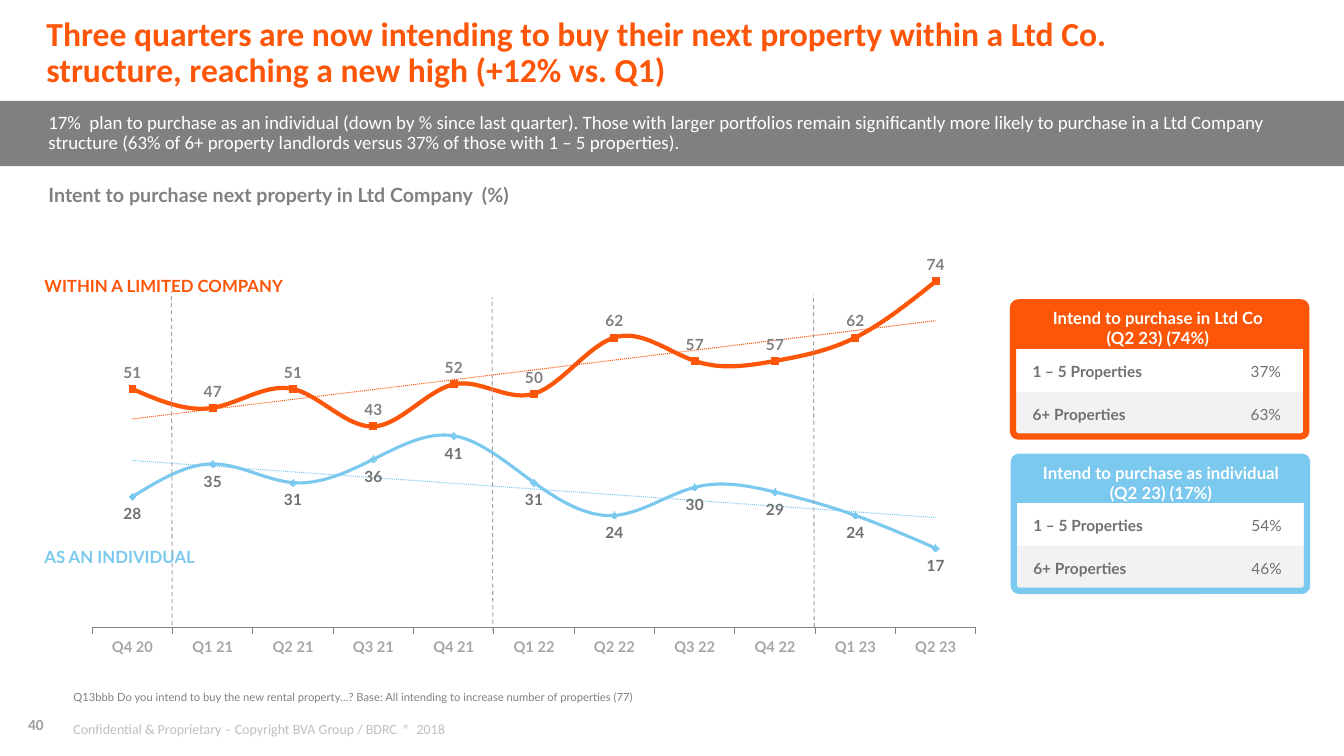
from lxml.etree import SubElement
from pptx import Presentation
from pptx.chart.data import CategoryChartData
from pptx.dml.color import RGBColor
from pptx.enum.chart import XL_CHART_TYPE as ChartType
from pptx.enum.chart import XL_LABEL_POSITION as LabelPosition
from pptx.enum.chart import XL_TICK_MARK as TickMark
from pptx.enum.dml import MSO_LINE as Dash
from pptx.enum.shapes import MSO_CONNECTOR as Connector
from pptx.enum.shapes import MSO_SHAPE as Shape
from pptx.enum.text import MSO_ANCHOR as Anchor
from pptx.enum.text import PP_ALIGN as Align
from pptx.oxml import parse_xml
from pptx.oxml.ns import nsdecls, qn
from pptx.util import Cm, Pt

# Content
ORANGE, BLUE, GREY, DARK, PALE = "FD5608", "7BC9EE", "808080", "707070", "A6A6A6"
WHITE, STRIPE = "FFFFFF", "F2F2F2"
TITLE = ("Three quarters are now intending to buy their next property within a Ltd Co. "
         "structure, reaching a new high (+12% vs. Q1)")
SUMMARY = ("17%  plan to purchase as an individual (down by % since last quarter). Those with "
           "larger portfolios remain significantly more likely to purchase in a Ltd Company "
           "structure (63% of 6+ property landlords versus 37% of those with 1 – 5 properties).")
FOOTNOTE = ("Q13bbb Do you intend to buy the new rental property…? "
            "Base: All intending to increase number of properties (77)")
COPYRIGHT = "Confidential & Proprietary – Copyright BVA Group / BDRC  ®  2018"

# Text, box (left, top, width, height in cm), format
TEXTS = [
    (SUMMARY, (1.22, 2.54, 30.78, 1.63),
     dict(size=13.5, color=WHITE, font="Calibri", spacing=0.9)),
    ("Intent to purchase next property in Ltd Company  (%)", (1.22, 4.39, 30.43, 1.09),
     dict(size=14, color=GREY, bold=True, spacing=0.9)),
    ("WITHIN A LIMITED COMPANY", (1.12, 6.5, 7.14, 1.4),
     dict(size=12, color=ORANGE, bold=True)),
    ("AS AN INDIVIDUAL", (1.12, 13.34, 7.14, 1.4), dict(size=12, color=BLUE, bold=True)),
    (FOOTNOTE, (1.85, 17.2, 24.61, 0.76), dict(size=8, color=GREY, spacing=0.9)),
    (COPYRIGHT, (1.85, 18.14, 28.5, 0.45), dict(size=10, color="BFBFBF", font="Calibri")),
    ("40", (0.71, 17.8, 0.7, 0.91),
     dict(size=11, color="9F9F9F", bold=True, font="Calibri")),
]
QUARTERS = ["Q4 20", "Q1 21", "Q2 21", "Q3 21", "Q4 21", "Q1 22",
            "Q2 22", "Q3 22", "Q4 22", "Q1 23", "Q2 23"]
# Name, values, line colour, line width, label colour, label position
SERIES = [
    ("Within a limited company", [51, 47, 51, 43, 52, 50, 62, 57, 57, 62, 74],
     ORANGE, 3, GREY, LabelPosition.ABOVE),
    ("As an individual", [28, 35, 31, 36, 41, 31, 24, 30, 29, 24, 17],
     BLUE, 2.25, DARK, LabelPosition.BELOW),
]
PLOT = {"x": 0.105, "y": 0.033, "w": 0.89, "h": 0.878}
YEAR_LINES = [(4.34, 15.75, 7.34), (12.42, 15.9, 7.49), (20.52, 15.8, 7.42)]
# Left, top, colour, header, header columns (first, last), rows
CARDS = [
    (25.58, 7.72, ORANGE, "Intend to purchase in Ltd Co\n(Q2 23) (74%)", (1, 2),
     [("1 – 5 Properties", "37%"), ("6+ Properties", "63%")]),
    (25.6, 11.61, BLUE, "Intend to purchase as individual\n(Q2 23) (17%)", (0, 3),
     [("1 – 5 Properties", "54%"), ("6+ Properties", "46%")]),
]
COLUMNS, ROWS = (0.41, 5.44, 0.94, 0.53), (1.07, 1.09, 1.09)
NO_STYLE = "{2D5ABB26-0587-4C30-8999-92F81FD0307C}"


def rgb(value):
    return RGBColor.from_string(value)


def format_font(font, size, color, bold=False, name="Lato"):
    font.size, font.bold, font.name = Pt(size), bold, name
    font.color.rgb = rgb(color)


def write(frame, text, size, color, bold=False, font="Lato", align=Align.LEFT, spacing=1.0):
    for number, line in enumerate(text.split("\n")):
        para = frame.add_paragraph() if number else frame.paragraphs[0]
        para.alignment, para.line_spacing, para.space_before = align, spacing, Pt(0)
        span = para.add_run()
        span.text = line
        format_font(span.font, size, color, bold, font)


def prepare(frame):
    frame.word_wrap, frame.vertical_anchor = True, Anchor.MIDDLE
    frame.margin_left = frame.margin_right = frame.margin_top = frame.margin_bottom = 0


def add_shape(page, kind, box, fill=None, line=None, width=1.5):
    shape = page.shapes.add_shape(kind, *map(Cm, box))
    shape.shadow.inherit = False
    if fill:
        shape.fill.solid()
        shape.fill.fore_color.rgb = rgb(fill)
    else:
        shape.fill.background()
    if line:
        shape.line.color.rgb = rgb(line)
        shape.line.width = Pt(width)
    else:
        shape.line.fill.background()
    return shape


def add_line(page, start, end, color, width, dash=None):
    line = page.shapes.add_connector(Connector.STRAIGHT, *map(Cm, start + end))
    line.line.color.rgb = rgb(color)
    line.line.width = Pt(width)
    if dash:
        line.line.dash_style = dash
    SubElement(line._element.spPr, qn("a:effectLst"))


def add_trend(series, color):
    trend = parse_xml(
        f'<c:trendline {nsdecls("c", "a")}><c:spPr><a:ln w="9525"><a:solidFill>'
        f'<a:srgbClr val="{color}"/></a:solidFill><a:prstDash val="sysDot"/></a:ln></c:spPr>'
        '<c:trendlineType val="linear"/><c:dispRSqr val="0"/><c:dispEq val="0"/></c:trendline>')
    series._element.find(qn("c:cat")).addprevious(trend)


def place_plot(chart):
    area = chart._chartSpace.chart.plotArea
    for old in area.findall(qn("c:layout")):
        area.remove(old)
    sizes = "".join(f'<c:{key} val="{value}"/>' for key, value in PLOT.items())
    area.insert(0, parse_xml(
        f'<c:layout {nsdecls("c")}><c:manualLayout><c:layoutTarget val="inner"/>'
        f'<c:xMode val="edge"/><c:yMode val="edge"/>{sizes}</c:manualLayout></c:layout>'))


def add_intent_chart(page):
    data = CategoryChartData(number_format="0")
    data.categories = QUARTERS
    for name, values, *_ in SERIES:
        data.add_series(name, values)
    box = map(Cm, (-0.3, 3.58, 25.02, 13.44))
    chart = page.shapes.add_chart(ChartType.LINE, *box, data).chart
    chart.has_legend = chart.has_title = False
    format_font(chart.font, 10.5, DARK)
    chart.plots[0].vary_by_categories = False
    place_plot(chart)

    # Axes
    scale, quarters = chart.value_axis, chart.category_axis
    scale.minimum_scale, scale.maximum_scale = 0, 100
    scale.has_major_gridlines = scale.visible = False
    quarters.major_tick_mark = TickMark.OUTSIDE
    quarters.format.line.color.rgb = rgb(GREY)
    quarters.format.line.width = Pt(0.75)
    format_font(quarters.tick_labels.font, 10.5, PALE, True)

    # Lines, labels and trends
    for series, (_, _, color, width, label_color, position) in zip(chart.plots[0].series, SERIES):
        series.smooth = True
        series.marker.style = None
        series.format.line.color.rgb = rgb(color)
        series.format.line.width = Pt(width)
        labels = series.data_labels
        labels.show_value, labels.position = True, position
        labels.number_format, labels.number_format_is_linked = "0", False
        format_font(labels.font, 11, label_color, True)
        add_trend(series, color)


def add_card(page, left, top, color, header, header_columns, rows):
    box = map(Cm, (left, top, sum(COLUMNS), sum(ROWS)))
    table = page.shapes.add_table(len(ROWS), len(COLUMNS), *box).table
    table._tbl.tblPr.find(qn("a:tableStyleId")).text = NO_STYLE
    for column, width in zip(table.columns, COLUMNS):
        column.width = Cm(width)
    for row, height, fill in zip(table.rows, ROWS, (color, WHITE, STRIPE)):
        row.height = Cm(height)
        for cell in row.cells:
            cell.fill.solid()
            cell.fill.fore_color.rgb = rgb(fill)
            cell.vertical_anchor = Anchor.MIDDLE
            cell.margin_left = cell.margin_right = cell.margin_top = Cm(0.03)
            cell.margin_bottom = 0
    first, last = header_columns
    table.cell(0, first).merge(table.cell(0, last))
    write(table.cell(0, first).text_frame, header, 12, WHITE, bold=True, align=Align.CENTER)
    for number, (group, share) in enumerate(rows, 1):
        write(table.cell(number, 1).text_frame, group, 11, DARK, bold=True)
        write(table.cell(number, 2).text_frame, share, 11, DARK, align=Align.CENTER)

    # Rounded frame with a thickened top edge
    frame = add_shape(page, Shape.ROUNDED_RECTANGLE, (left - 0.05, top - 0.1, 7.39, 3.38),
                      line=color, width=4.5)
    frame.adjustments[0] = 0.04
    add_line(page, (left + 0.18, top - 0.05), (left + 7.16, top - 0.05), color, 4.5)
    for right, down, width, height in ((0.08, -0.08, 0.15, 0.1), (7.06, -0.05, 0.2, 0.13)):
        add_shape(page, Shape.OVAL, (left + right, top + down, width, height), color, color)


def main():
    deck = Presentation()
    deck.slide_width, deck.slide_height = Cm(33.87), Cm(19.05)
    page = deck.slides.add_slide(deck.slide_layouts[5])

    # Title and band
    title = page.shapes.title
    title.left, title.top, title.width, title.height = map(Cm, (1.17, 0.43, 28.02, 1.85))
    prepare(title.text_frame)
    write(title.text_frame, TITLE, 24, ORANGE, bold=True, font="Calibri", spacing=0.9)
    add_shape(page, Shape.RECTANGLE, (0, 2.54, 33.87, 1.65), GREY)

    # Chart, texts, year dividers and cards
    add_intent_chart(page)
    for text, box, style in TEXTS:
        frame = page.shapes.add_textbox(*map(Cm, box)).text_frame
        prepare(frame)
        write(frame, text, **style)
    for left, bottom, top in YEAR_LINES:
        add_line(page, (left, bottom), (left - 0.02, top), PALE, 0.75, Dash.DASH)
    for card in CARDS:
        add_card(page, *card)
    deck.save("out.pptx")


if __name__ == "__main__":
    main()
